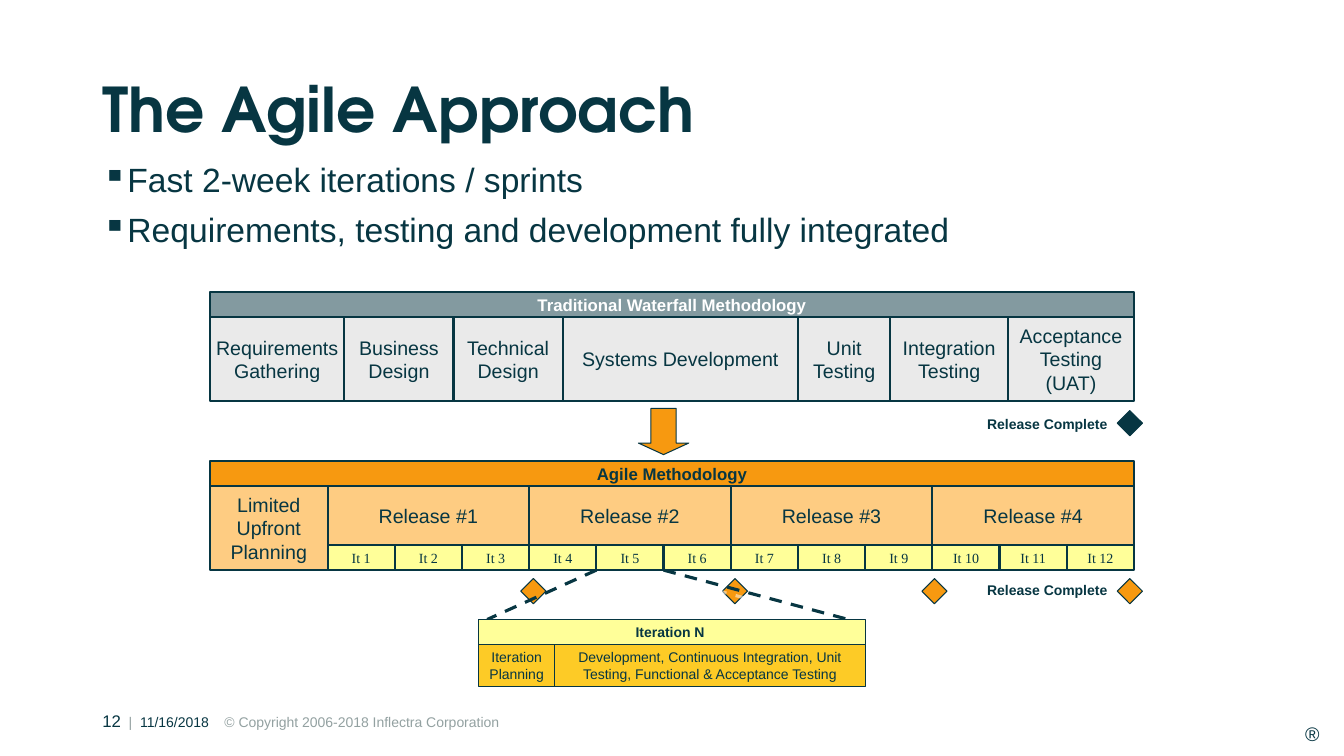
from lxml import etree
from pptx import Presentation
from pptx.dml.color import RGBColor
from pptx.enum.dml import MSO_LINE
from pptx.enum.shapes import MSO_CONNECTOR, MSO_SHAPE
from pptx.enum.text import MSO_ANCHOR, PP_ALIGN
from pptx.oxml.ns import qn
from pptx.util import Pt

PX = 9525  # EMU per px, 96 px to the inch

INK = RGBColor(0x07, 0x36, 0x42)
WHITE = RGBColor(0xFF, 0xFF, 0xFF)
SLATE = RGBColor(0x83, 0x9A, 0xA0)
MUTED = RGBColor(0x93, 0xA1, 0xA1)
LIGHT_GRAY = RGBColor(0xEA, 0xEA, 0xEA)
ORANGE = RGBColor(0xF7, 0x99, 0x10)
PEACH = RGBColor(0xFE, 0xCC, 0x82)
YELLOW = RGBColor(0xFF, 0xFF, 0x99)
GOLD = RGBColor(0xFD, 0xCB, 0x26)

BODY_FONT = "Arial"
TITLE_FONT = "TeX Gyre Adventor"
SERIF_FONT = "Times New Roman"

RECTANGLE, DIAMOND, DOWN_ARROW = MSO_SHAPE.RECTANGLE, MSO_SHAPE.DIAMOND, MSO_SHAPE.DOWN_ARROW
STRAIGHT, DASH = MSO_CONNECTOR.STRAIGHT, MSO_LINE.DASH
TOP, MIDDLE = MSO_ANCHOR.TOP, MSO_ANCHOR.MIDDLE
LEFT, CENTER, RIGHT = PP_ALIGN.LEFT, PP_ALIGN.CENTER, PP_ALIGN.RIGHT


class SlideBuilder:
    """Holds the current page and draws each kind of element on it."""

    def __init__(self, page):
        self.shapes = page.shapes

    def span(self, para, words, size, color=INK, bold=False, font=BODY_FONT):
        span = para.add_run()
        span.text = words
        span.font.name = font
        span.font.size = Pt(size)
        span.font.bold = bold
        span.font.color.rgb = color

    def fill_text(self, box, words, size, align=LEFT, anchor=TOP, wrap=True,
                  spacing=1.0, inset=None, **style):
        frame = box.text_frame
        frame.word_wrap = wrap
        frame.vertical_anchor = anchor
        if inset is not None:
            frame.margin_left = frame.margin_right = inset * PX
        for index, line in enumerate(words.split("\n")):
            para = frame.add_paragraph() if index else frame.paragraphs[0]
            para.alignment = align
            para.line_spacing = spacing
            self.span(para, line, size, **style)

    def text_box(self, left, top, width, height):
        return self.shapes.add_textbox(left * PX, top * PX, width * PX, height * PX)

    def text(self, left, top, width, height, words, size, **style):
        self.fill_text(self.text_box(left, top, width, height), words, size, **style)

    def bullets(self, left, top, width, height, lines, size):
        frame = self.text_box(left, top, width, height).text_frame
        frame.word_wrap = True
        for index, line in enumerate(lines):
            para = frame.add_paragraph() if index else frame.paragraphs[0]
            properties = para._p.get_or_add_pPr()
            properties.set("marL", str(24 * PX))
            properties.set("indent", str(-24 * PX))
            etree.SubElement(properties, qn("a:buChar"), char="▪")
            para.line_spacing = 0.9
            para.space_before = Pt(10 if index else 0)
            self.span(para, line, size)

    def shape(self, kind, left, top, width, height, fill, line_width=0.75):
        shape = self.shapes.add_shape(kind, left * PX, top * PX, width * PX, height * PX)
        shape.shadow.inherit = False
        shape.fill.solid()
        shape.fill.fore_color.rgb = fill
        shape.line.color.rgb = INK
        shape.line.width = Pt(line_width)
        return shape

    def cell(self, left, top, width, height, fill, words, size=14, line_width=1.5, **style):
        box = self.shape(RECTANGLE, left, top, width, height, fill, line_width)
        self.fill_text(box, words, size, align=CENTER, anchor=MIDDLE, **style)

    def milestone(self, left, top, fill):
        self.shape(DIAMOND, left, top, 24, 24, fill)

    def dashed_line(self, x1, y1, x2, y2):
        line = self.shapes.add_connector(STRAIGHT, x1 * PX, y1 * PX, x2 * PX, y2 * PX)
        line.line.color.rgb = INK
        line.line.width = Pt(2.25)
        line.line.dash_style = DASH
        # Soft white shadow, seen where the line crosses a milestone
        effects = etree.SubElement(line._element.spPr, qn("a:effectLst"))
        shadow = etree.SubElement(effects, qn("a:outerShdw"),
                                  dist=str(Pt(8.5)), dir="2700000")
        color = etree.SubElement(shadow, qn("a:srgbClr"), val=str(WHITE))
        etree.SubElement(color, qn("a:alpha"), val="50000")


def main():
    deck = Presentation()
    deck.slide_width, deck.slide_height = 1280 * PX, 720 * PX
    slide = SlideBuilder(deck.slides.add_slide(deck.slide_layouts[6]))

    # Footer
    footer = slide.text_box(88, 672, 717, 29).text_frame
    footer.word_wrap = True
    for words, size, color in (
        ("12", 12, INK),
        ("  |  ", 10, MUTED),
        ("11/16/2018  ", 10, INK),
        ("  © Copyright 2006-2018 Inflectra Corporation", 10, MUTED),
    ):
        slide.span(footer.paragraphs[0], words, size, color)
    slide.text(1243, 683, 24, 23, "®", 14, inset=0)

    # Title and bullets
    slide.text(88, 38, 1104, 139, "The Agile Approach", 44, anchor=MIDDLE,
               spacing=0.9, bold=True, font=TITLE_FONT)
    slide.bullets(88, 151, 1104, 497, (
        "Fast 2-week iterations / sprints",
        "Requirements, testing and development fully integrated",
    ), 24)

    # Waterfall phases
    left = 200
    for words, width in (
        ("Requirements\nGathering", 128),
        ("Business Design", 104),
        ("Technical Design", 104),
        ("Systems Development", 224),
        ("Unit\nTesting", 88),
        ("Integration\nTesting", 112),
        ("Acceptance\nTesting (UAT)", 120),
    ):
        slide.cell(left, 302, width, 80, LIGHT_GRAY, words,
                   wrap=not words.startswith("Requirements"))
        left += width
    slide.cell(200, 278, 880, 24, SLATE, "Traditional Waterfall Methodology", 12,
               color=WHITE, bold=True)
    slide.shape(DOWN_ARROW, 608, 389, 48, 44, ORANGE).adjustments[1] = 0.25

    # Milestones
    slide.milestone(1064, 391, INK)
    for left in (496, 688, 878, 1064):
        slide.milestone(left, 551, ORANGE)
    for top in (391, 549):
        slide.text(930, top, 134, 26, "Release Complete", 10, align=RIGHT,
                   wrap=False, spacing=1.01, bold=True)

    # Agile releases and their iterations
    slide.cell(200, 463, 112, 80, PEACH, "Limited Upfront Planning")
    for release in range(4):
        slide.cell(312 + 192 * release, 463, 192, 56, PEACH, f"Release #{release + 1}")
    slide.cell(200, 439, 880, 24, ORANGE, "Agile Methodology", 12, bold=True)
    for iteration in range(12):
        slide.cell(312 + 64 * iteration, 519, 64, 24, YELLOW, f"It {iteration + 1}", 10,
                   inset=0, font=SERIF_FONT)

    # Close-up of one iteration
    slide.dashed_line(568, 543, 464, 590)
    slide.dashed_line(632, 543, 808, 590)
    for left, top, width, height, fill, words, bold in (
        (456, 590, 368, 24, YELLOW, "Iteration N ", True),
        (456, 614, 72, 40, GOLD, "Iteration Planning", False),
        (528, 614, 296, 40, GOLD, "Development, Continuous Integration, Unit Testing, "
                                  "Functional & Acceptance Testing", False),
    ):
        slide.cell(left, top, width, height, fill, words, 10, line_width=0.75,
                   spacing=1.01, bold=bold)

    deck.save("out.pptx")


if __name__ == "__main__":
    main()
